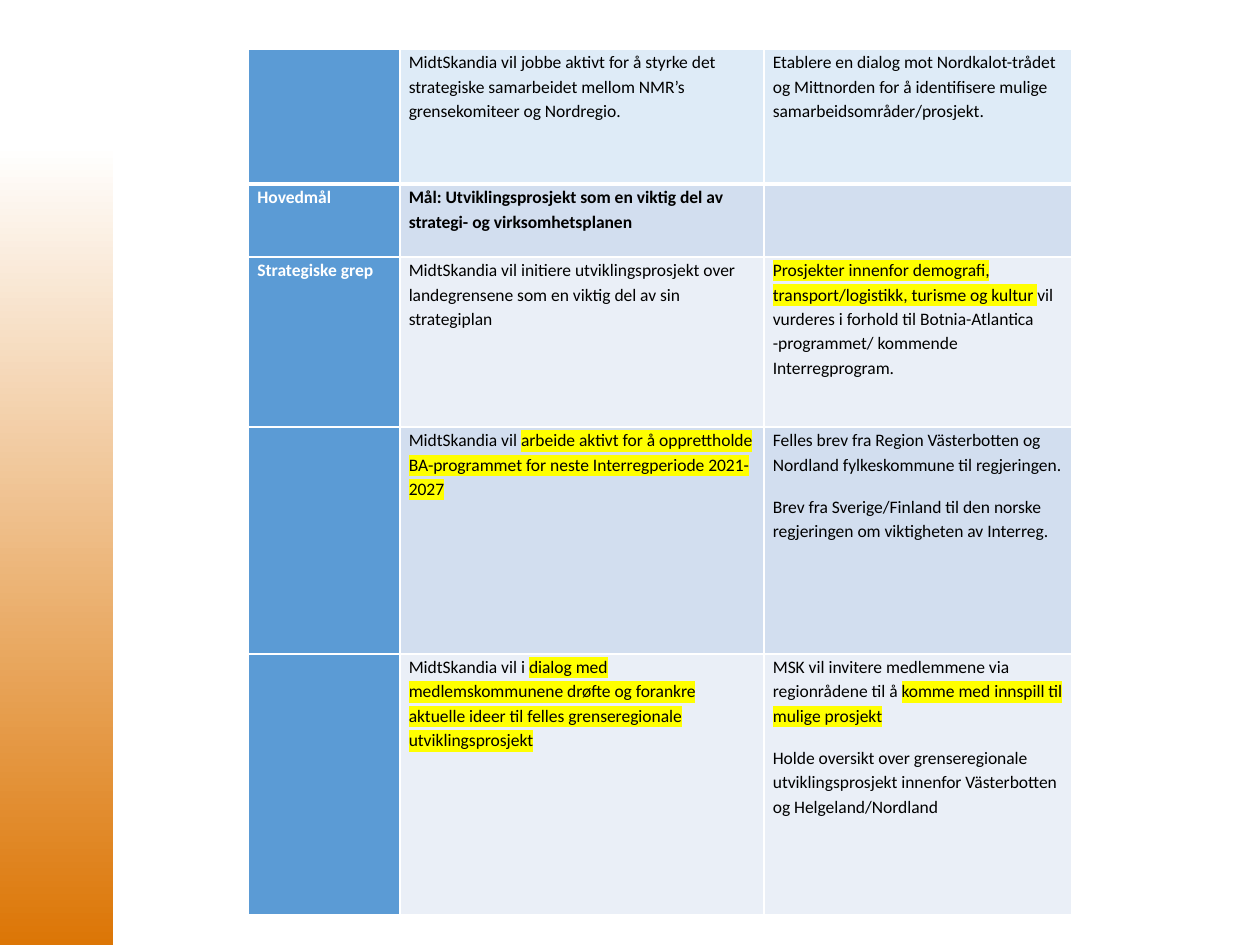
from lxml.etree import SubElement
from pptx import Presentation
from pptx.dml.color import RGBColor
from pptx.enum.shapes import MSO_SHAPE
from pptx.oxml import parse_xml
from pptx.oxml.ns import nsdecls, qn
from pptx.util import Cm, Pt


def colour(value):
    return RGBColor.from_string(value)


def write(paragraph, text, size=10, font="Calibri", color="000000", bold=False, highlight="FFFF00"):
    paragraph.line_spacing = 1.15
    paragraph.space_after = Pt(10)
    for index, part in enumerate(text.split("|")):
        if not part:
            continue
        span = paragraph.add_run()
        span.text = part
        span.font.size = Pt(size)
        span.font.bold = bold
        span.font.color.rgb = colour(color)
        if index % 2:
            marker = SubElement(span.font._element, qn("a:highlight"))
            SubElement(marker, qn("a:srgbClr"), val=highlight)
        span.font.name = font


deck = Presentation()
deck.slide_width, deck.slide_height = Cm(25.4), Cm(19.05)
page = deck.slides.add_slide(deck.slide_layouts[6])

band = page.shapes.add_shape(MSO_SHAPE.RECTANGLE, Cm(0), Cm(2.92), Cm(2.29), Cm(16.13))
band.shadow.inherit = False
band.line.fill.background()
band.fill.gradient()
band.fill.gradient_angle = 270
for stop, position, value in zip(band.fill.gradient_stops, (0, 1), ("FFFFFF", "DC7606")):
    stop.position = position
    stop.color.rgb = colour(value)

rows = [
    (2.72, "DEEBF7", "",
     ["MidtSkandia vil jobbe aktivt for å styrke det strategiske samarbeidet mellom NMR’s grensekomiteer og Nordregio."],
     ["Etablere en dialog mot Nordkalot-trådet og Mittnorden for å identifisere mulige samarbeidsområder/prosjekt."]),
    (1.47, "D2DEEF", "Hovedmål",
     ["Mål: Utviklingsprosjekt som en viktig del av strategi- og virksomhetsplanen"], []),
    (3.43, "EAEFF7", "Strategiske grep",
     ["MidtSkandia vil initiere utviklingsprosjekt over landegrensene som en viktig del av sin strategiplan"],
     ["|Prosjekter innenfor demografi, transport/logistikk, turisme og kultur |vil vurderes i forhold til "
      "Botnia-Atlantica -programmet/ kommende Interregprogram."]),
    (4.57, "D2DEEF", "",
     ["MidtSkandia vil |arbeide aktivt for å opprettholde BA-programmet for neste Interregperiode 2021-2027|"],
     ["Felles brev fra Region Västerbotten og Nordland fylkeskommune til regjeringen.",
      "Brev fra Sverige/Finland til den norske regjeringen om viktigheten av Interreg."]),
    (5.26, "EAEFF7", "",
     ["MidtSkandia vil i |dialog med medlemskommunene drøfte og forankre aktuelle ideer til felles "
      "grenseregionale utviklingsprosjekt|"],
     ["MSK vil invitere medlemmene via regionrådene til å |komme med innspill til mulige prosjekt|",
      "Holde oversikt over grenseregionale utviklingsprosjekt innenfor Västerbotten og Helgeland/Nordland"]),
]
widths = [3.05, 7.34, 6.2]

table = page.shapes.add_table(
    len(rows), len(widths), Cm(5.01), Cm(0.99), Cm(sum(widths)), Cm(sum(row[0] for row in rows))
).table
table.first_row = False
table.horz_banding = False
for column, width in zip(table.columns, widths):
    column.width = Cm(width)

for row_index, (height, shade, heading, goals, actions) in enumerate(rows):
    table.rows[row_index].height = Cm(height)
    for column_index, texts in enumerate(([heading], goals, actions)):
        cell = table.cell(row_index, column_index)
        cell.margin_left = cell.margin_right = Cm(0.18)
        cell.margin_top = cell.margin_bottom = Cm(0)
        cell.fill.solid()
        cell.fill.fore_color.rgb = colour("5B9BD5" if column_index == 0 else shade)
        for text_index, text in enumerate(texts):
            frame = cell.text_frame
            paragraph = frame.add_paragraph() if text_index else frame.paragraphs[0]
            write(paragraph, text, bold=column_index == 0 or row_index == 1,
                  color="FFFFFF" if column_index == 0 else "000000")

        properties = cell._tc.get_or_add_tcPr()
        for place, side in enumerate("LRTB"):
            thick = (row_index, side) in ((0, "B"), (1, "T"))
            properties.insert(place, parse_xml(
                f'<a:ln{side} {nsdecls("a")} w="{Pt(3 if thick else 1)}">'
                f'<a:solidFill><a:srgbClr val="FFFFFF"/></a:solidFill></a:ln{side}>'))

deck.save("out.pptx")
